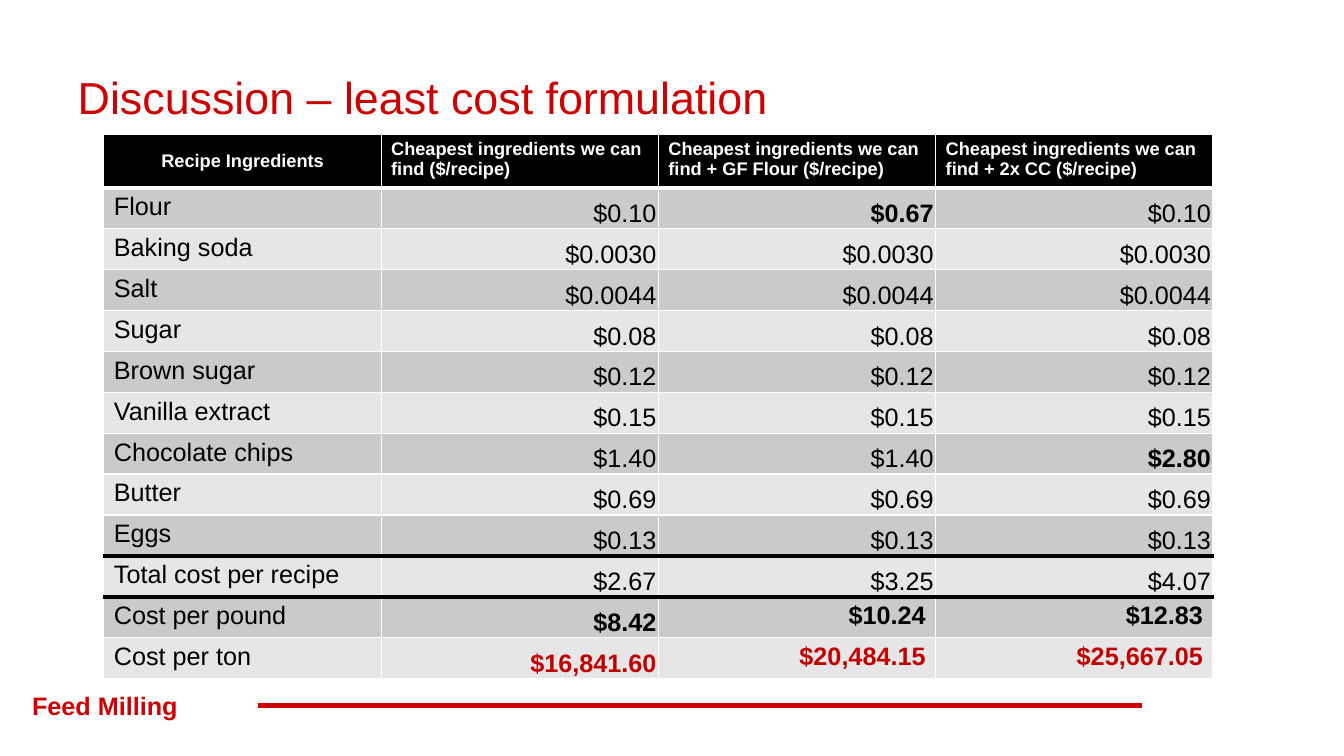
from dataclasses import dataclass

from lxml.etree import SubElement
from pptx import Presentation
from pptx.dml.color import RGBColor
from pptx.enum.shapes import MSO_CONNECTOR
from pptx.enum.text import MSO_ANCHOR, MSO_AUTO_SIZE, PP_ALIGN
from pptx.oxml.ns import qn
from pptx.util import Inches, Pt


@dataclass(frozen=True)
class Theme:
    font: str = "Arial"
    accent: str = "CC0000"
    highlight: str = "C00000"
    black: str = "000000"
    white: str = "FFFFFF"
    bands: tuple = ("CACACA", "E6E6E6")
    title_size: int = 32
    body_size: int = 18
    header_size: int = 13
    thin: int = 1
    thick: int = 3


THEME = Theme()

HEADERS = (
    "Recipe Ingredients",
    "Cheapest ingredients we can find ($/recipe)",
    "Cheapest ingredients we can find + GF Flour ($/recipe)",
    "Cheapest ingredients we can find + 2x CC ($/recipe)",
)
COSTS = (
    ("Flour", "$0.10", "$0.67", "$0.10"),
    ("Baking soda", "$0.0030", "$0.0030", "$0.0030"),
    ("Salt", "$0.0044", "$0.0044", "$0.0044"),
    ("Sugar", "$0.08", "$0.08", "$0.08"),
    ("Brown sugar", "$0.12", "$0.12", "$0.12"),
    ("Vanilla extract", "$0.15", "$0.15", "$0.15"),
    ("Chocolate chips", "$1.40", "$1.40", "$2.80"),
    ("Butter", "$0.69", "$0.69", "$0.69"),
    ("Eggs", "$0.13", "$0.13", "$0.13"),
    ("Total cost per recipe", "$2.67", "$3.25", "$4.07"),
    ("Cost per pound", "$8.42", "$10.24", "$12.83"),
    ("Cost per ton", "$16,841.60", "$20,484.15", "$25,667.05"),
)
CHANGED_COSTS = ("$0.67", "$2.80")
UNIT_COST_ROWS = ("Cost per pound", "Cost per ton")
RULED_ROWS = ("Eggs", "Total cost per recipe")


def style_paragraph(paragraph, size, color, bold=False, align=PP_ALIGN.LEFT):
    paragraph.alignment = align
    font = paragraph.font
    font.name, font.size, font.bold = THEME.font, Pt(size), bold
    font.color.rgb = RGBColor.from_string(color)


def set_margins(target, horizontal, vertical):
    target.margin_left = target.margin_right = Inches(horizontal)
    target.margin_top = target.margin_bottom = Inches(vertical)


def add_title(slide, left, top, width, height):
    title = slide.shapes.title
    title.left, title.top, title.width, title.height = map(Inches, (left, top, width, height))
    frame = title.text_frame
    frame.text = "Discussion – least cost formulation"
    frame.auto_size = MSO_AUTO_SIZE.NONE
    frame.vertical_anchor = MSO_ANCHOR.MIDDLE
    style_paragraph(frame.paragraphs[0], THEME.title_size, THEME.accent)


def set_borders(cell, top, bottom):
    """Draw thin white sides, and a (color, width) line above and below."""
    side = (THEME.white, THEME.thin)
    properties = cell._tc.get_or_add_tcPr()
    for tag, (color, width) in (("a:lnL", side), ("a:lnR", side), ("a:lnT", top), ("a:lnB", bottom)):
        line = SubElement(properties, qn(tag), w=str(Pt(width)))
        SubElement(SubElement(line, qn("a:solidFill")), qn("a:srgbClr"), val=color)


def line_below(label):
    if label == HEADERS[0]:
        return THEME.white, THEME.thick
    if label in RULED_ROWS:
        return THEME.black, THEME.thick
    return THEME.white, THEME.thin


def fill_cell(cell, text, color):
    cell.text = text
    cell.fill.solid()
    cell.fill.fore_color.rgb = RGBColor.from_string(color)
    set_margins(cell, 0.1, 0.05)
    return cell.text_frame.paragraphs[0]


def format_header(cell, text, is_label):
    paragraph = fill_cell(cell, text, THEME.black)
    cell.vertical_anchor = MSO_ANCHOR.MIDDLE if is_label else MSO_ANCHOR.TOP
    align = PP_ALIGN.CENTER if is_label else PP_ALIGN.LEFT
    style_paragraph(paragraph, THEME.header_size, THEME.white, True, align)


def format_cost(cell, text, label, column, band):
    paragraph = fill_cell(cell, text, band)
    if column == 0:
        style_paragraph(paragraph, THEME.body_size, THEME.black)
        return
    is_unit_cost = label in UNIT_COST_ROWS
    if not (is_unit_cost and column > 1):
        set_margins(cell, 0.02, 0.01)
        cell.vertical_anchor = MSO_ANCHOR.BOTTOM
    color = THEME.highlight if label == "Cost per ton" else THEME.black
    bold = is_unit_cost or text in CHANGED_COSTS
    style_paragraph(paragraph, THEME.body_size, color, bold, PP_ALIGN.RIGHT)


def add_cost_table(slide, left, top, width, height, header_height=0.49):
    rows = (HEADERS,) + COSTS
    table = slide.shapes.add_table(
        len(rows), len(HEADERS), *map(Inches, (left, top, width, height))
    ).table
    for column in table.columns:
        column.width = Inches(width / len(HEADERS))
    above = (THEME.white, THEME.thin)
    for index, values in enumerate(rows):
        label = values[0]
        below = line_below(label)
        row_height = (height - header_height) / len(COSTS) if index else header_height
        table.rows[index].height = Inches(row_height)
        for column, text in enumerate(values):
            cell = table.cell(index, column)
            set_borders(cell, above, below)
            if index == 0:
                format_header(cell, text, column == 0)
            else:
                format_cost(cell, text, label, column, THEME.bands[(index - 1) % 2])
        above = below


def add_footer(slide, left, top, width, height):
    box = slide.shapes.add_textbox(*map(Inches, (left, top, width, height)))
    frame = box.text_frame
    frame.word_wrap = True
    frame.text = "Feed Milling"
    style_paragraph(frame.paragraphs[0], THEME.body_size, THEME.accent, True)
    middle = Inches(top + height / 2)
    rule = slide.shapes.add_connector(
        MSO_CONNECTOR.STRAIGHT, Inches(left + 2.34), middle, Inches(left + 11.11), middle
    )
    rule.line.color.rgb = RGBColor.from_string(THEME.accent)
    rule.line.width = Pt(THEME.thick)
    SubElement(rule._element.spPr, qn("a:effectLst"))


def main():
    presentation = Presentation()
    presentation.slide_width, presentation.slide_height = Inches(13.33), Inches(7.5)
    slide = presentation.slides.add_slide(presentation.slide_layouts[5])
    add_footer(slide, 0.22, 6.8, 3.78, 0.4)
    add_title(slide, 0.67, 0.58, 12, 0.75)
    add_cost_table(slide, 1.03, 1.33, 11, 5.36)
    presentation.save("out.pptx")


if __name__ == "__main__":
    main()
